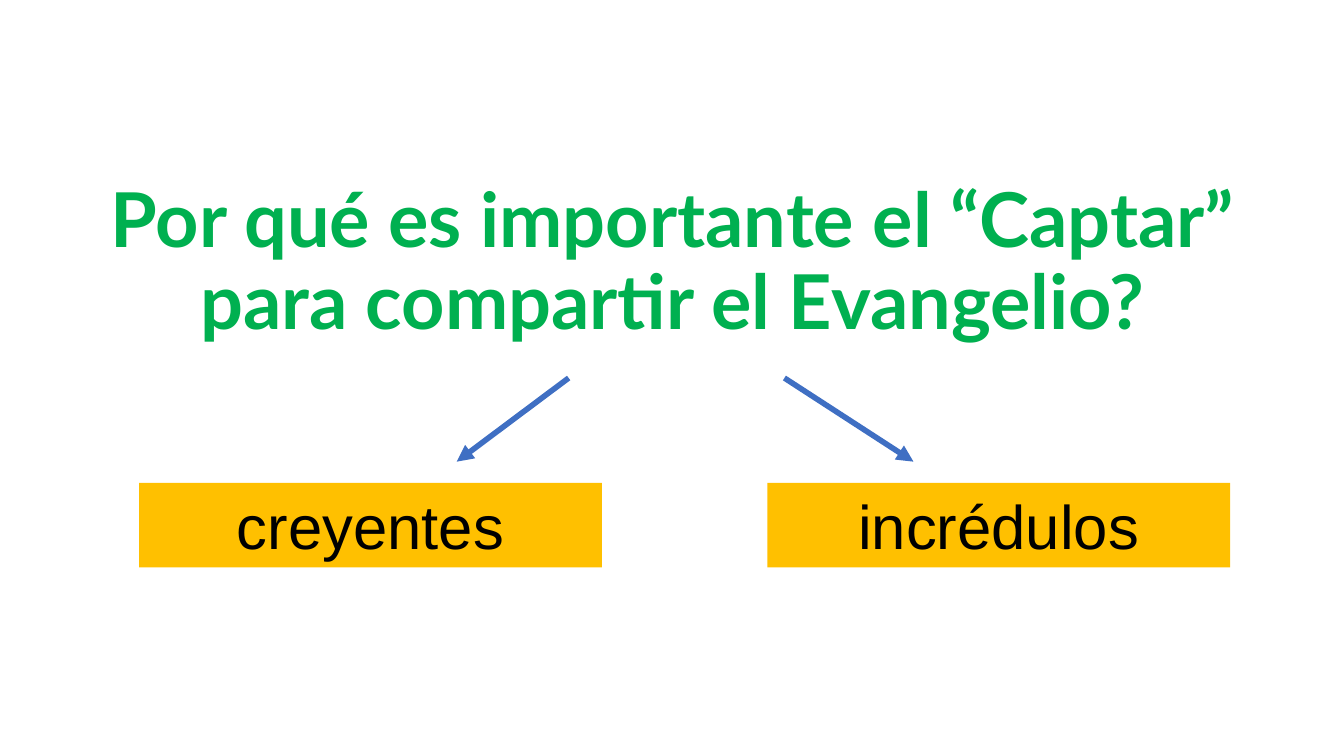
from dataclasses import dataclass

from lxml import etree
from pptx import Presentation
from pptx.dml.color import RGBColor
from pptx.enum.shapes import MSO_CONNECTOR, MSO_SHAPE
from pptx.enum.text import MSO_ANCHOR, PP_ALIGN
from pptx.oxml.ns import qn
from pptx.slide import Slide
from pptx.text.text import TextFrame
from pptx.util import Inches, Pt

RECT = MSO_SHAPE.RECTANGLE
LINE = MSO_CONNECTOR.STRAIGHT
MIDDLE = MSO_ANCHOR.MIDDLE
CENTER = PP_ALIGN.CENTER

COLORS = {"title": "00B050", "box": "FFC000", "text": "000000", "arrow": "3F6FC3"}
BOX_TOP, BOX_WIDTH, BOX_HEIGHT = 4.79, 4.59, 0.84
ARROW_TOP, ARROW_END = 3.75, 4.58


@dataclass
class Branch:
    label: str
    left: float
    start: float
    end: float


BRANCHES = [
    Branch("creyentes", 1.38, 5.64, 4.53),
    Branch("incrédulos", 7.61, 7.78, 9.06),
]


def color(name: str) -> RGBColor:
    return RGBColor.from_string(COLORS[name])


def write(frame: TextFrame, text: str, *, font: str, size: float, tint: str,
          bold: bool = False, spacing: float = 1.0) -> None:
    frame.word_wrap = True
    frame.vertical_anchor = MIDDLE
    para = frame.paragraphs[0]
    para.alignment = CENTER
    para.line_spacing = spacing
    run = para.add_run()
    run.text = text
    run.font.name = font
    run.font.size = Pt(size)
    run.font.bold = bold
    run.font.color.rgb = color(tint)


def draw_box(slide: Slide, branch: Branch) -> None:
    box = slide.shapes.add_shape(RECT, Inches(branch.left), Inches(BOX_TOP),
                                 Inches(BOX_WIDTH), Inches(BOX_HEIGHT))
    box.shadow.inherit = False
    box.fill.solid()
    box.fill.fore_color.rgb = color("box")
    box.line.fill.background()
    write(box.text_frame, branch.label, font="Arial", size=44, tint="text")


def draw_arrow(slide: Slide, branch: Branch) -> None:
    arrow = slide.shapes.add_connector(LINE, Inches(branch.start), Inches(ARROW_TOP),
                                       Inches(branch.end), Inches(ARROW_END))
    arrow.line.color.rgb = color("arrow")
    arrow.line.width = Pt(4)
    etree.SubElement(arrow.line._get_or_add_ln(), qn("a:tailEnd"), type="triangle")
    etree.SubElement(arrow._element.spPr, qn("a:effectLst"))


def main() -> None:
    deck = Presentation()
    deck.slide_width, deck.slide_height = Inches(13.33), Inches(7.5)
    slide = deck.slides.add_slide(deck.slide_layouts[6])
    title = slide.shapes.add_textbox(Inches(0.92), Inches(1.76), Inches(11.5), Inches(1.72))
    write(title.text_frame, "Por qué es importante el “Captar” para compartir el Evangelio?",
          font="Lato", size=54, tint="title", bold=True, spacing=0.9)
    for draw in (draw_box, draw_arrow):
        for branch in BRANCHES:
            draw(slide, branch)
    deck.save("out.pptx")


if __name__ == "__main__":
    main()
